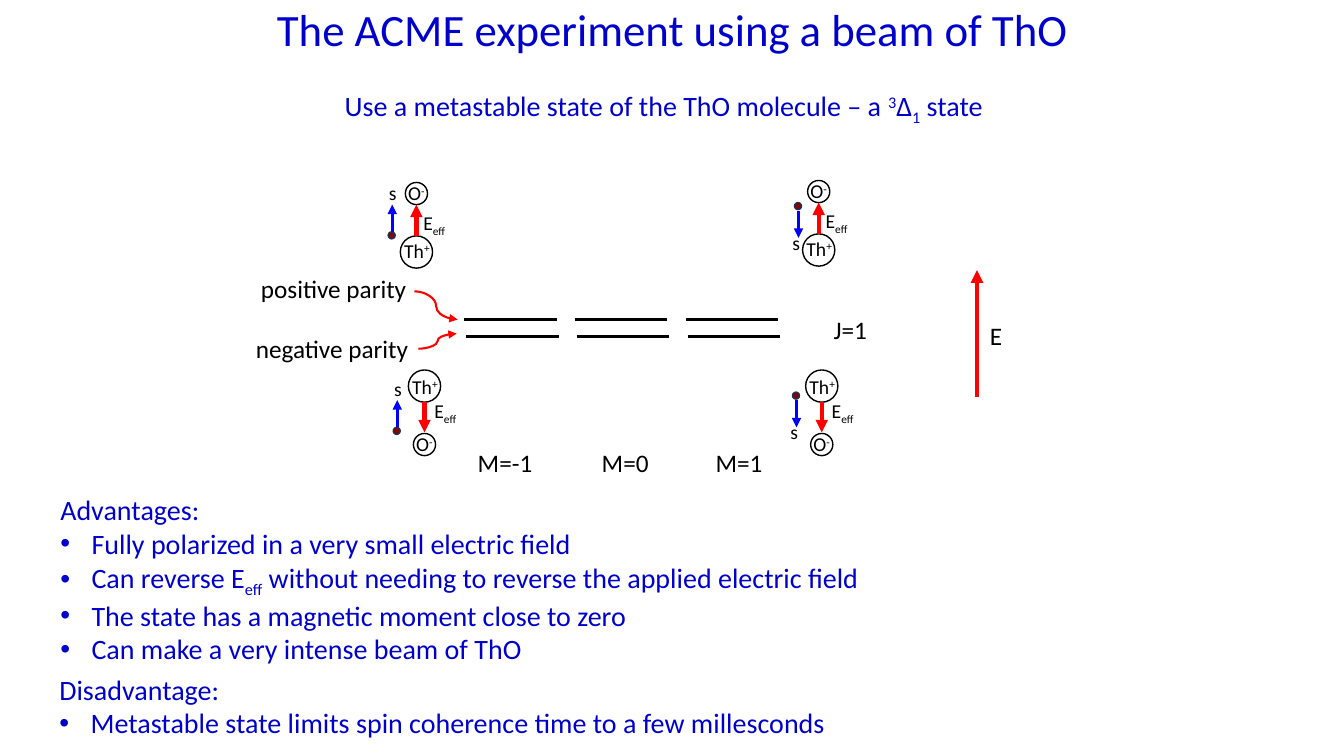
from dataclasses import dataclass
from lxml.etree import SubElement as Sub
from pptx import Presentation
from pptx.dml.color import RGBColor as Rgb
from pptx.enum.shapes import MSO_CONNECTOR as Conn, MSO_SHAPE as Geo
from pptx.enum.text import MSO_ANCHOR as Anchor, MSO_AUTO_SIZE as Auto, PP_ALIGN as Align
from pptx.oxml.ns import qn
from pptx.util import Inches, Pt


@dataclass(frozen=True)
class Theme:
    """Hold the colours, font and type sizes."""
    font: str = "Calibri"
    blue: str = "0000CC"
    black: str = "000000"
    red: str = "FF0000"
    spin: str = "0000FF"
    dot: str = "860000"
    edge: str = "1E3256"
    title: int = 32
    body: int = 20
    label: int = 18
    small: int = 14


def apply(obj, form):
    """Set each attribute named in a dict."""
    for name, value in form.items():
        setattr(obj, name, value)


class Board:
    """Draw the elements of one slide in one style."""

    def __init__(self, slide, theme):
        """Keep the slide and its theme."""
        self.slide, self.theme = slide, theme

    def text(self, x, y, w, h, paras, size, color, align=Align.LEFT):
        """Add a text box; a paragraph is a list of (text, baseline) runs."""
        box = self.slide.shapes.add_textbox(Inches(x), Inches(y), Inches(w), Inches(h))
        frame = box.text_frame
        mid = align == Align.CENTER
        apply(frame, {
            "word_wrap": True,
            "vertical_anchor": Anchor.TOP,
            "auto_size": Auto.NONE if mid else Auto.SHAPE_TO_FIT_TEXT,
            "margin_right": Inches(0.1 if mid else 0),
        })
        for i, runs in enumerate(paras):
            para = frame.paragraphs[0] if i == 0 else frame.add_paragraph()
            para.alignment = align
            if i:
                self.bullet(para)
            for words, base in runs:
                run = para.add_run()
                run.text = words
                apply(run.font, {"name": self.theme.font, "size": Pt(size)})
                run.font.color.rgb = Rgb.from_string(color)
                if base:
                    run.font._element.set("baseline", str(base * 1000))

    def bullet(self, para):
        """Give a paragraph a round bullet and a hanging indent."""
        props = para._p.get_or_add_pPr()
        props.set("marL", str(Inches(0.31)))
        props.set("indent", str(-Inches(0.31)))
        Sub(props, qn("a:buFont")).set("typeface", "Arial")
        Sub(props, qn("a:buChar")).set("char", "•")

    def label(self, x, y, w, words):
        """Add a one-line black label."""
        self.text(x, y, w, 0.4, [[(words, 0)]], self.theme.label, self.theme.black)

    def mark(self, x, y, w, *runs):
        """Add a small label of plain and raised or lowered runs."""
        self.text(x, y, w, 0.34, [runs], self.theme.small, self.theme.black)

    def line(self, x1, y1, x2, y2, color, width, head=True, kind=Conn.STRAIGHT):
        """Add a connector, with an arrowhead if asked."""
        link = self.slide.shapes.add_connector(
            kind, Inches(x1), Inches(y1), Inches(x2), Inches(y2))
        link.line.color.rgb = Rgb.from_string(color)
        link.line.width = Pt(width)
        if head:
            Sub(link.line._get_or_add_ln(), qn("a:tailEnd")).set("type", "triangle")
        Sub(link._element.spPr, qn("a:effectLst"))

    def disc(self, x, y, size, edge, fill=None):
        """Add a circle, hollow unless a fill is given."""
        disc = self.slide.shapes.add_shape(
            Geo.OVAL, Inches(x), Inches(y), Inches(size), Inches(size))
        disc.shadow.inherit = False
        if fill:
            disc.fill.solid()
            disc.fill.fore_color.rgb = Rgb.from_string(fill)
        else:
            disc.fill.background()
        disc.line.color.rgb = Rgb.from_string(edge)
        disc.line.width = Pt(1)

    def ion(self, x, y, up):
        """Add a ThO molecule whose Th circle starts at x, y."""
        tone = self.theme
        oxy, tail, tip = (-0.53, 0, -0.31) if up else (0.63, 0.32, 0.62)
        self.disc(x, y, 0.32, tone.black)
        self.mark(x - 0.06, y - (0.02 if up else 0), 0.47, ("Th", 0), ("+", 30))
        self.disc(x + 0.05, y + oxy, 0.22, tone.black)
        self.mark(x - 0.02, y + oxy - 0.06, 0.47, ("O", 0), ("-", 30))
        self.line(x + 0.16, y + tail, x + 0.16, y + tip, tone.red, 3)
        dx, dy = (0.13, -0.3) if up else (0.16, 0.24)
        self.mark(x + dx, y + dy, 0.65, ("E", 0), ("eff", -25))

    def spin(self, x, y, up):
        """Add a spin arrow whose dot starts at x, y."""
        tone = self.theme
        tail, tip, dx, dy = (0, -0.27, -0.09, -0.55) if up else (0.08, 0.35, -0.12, 0.23)
        self.disc(x, y, 0.07, tone.edge, tone.dot)
        self.line(x + 0.04, y + tail, x + 0.04, y + tip, tone.spin, 2.25)
        self.mark(x + dx, y + dy, 0.2, ("s", 0))


def main():
    """Build and save the slide."""
    deck = Presentation()
    apply(deck, {"slide_width": Inches(13.33), "slide_height": Inches(7.5)})
    tone = Theme()
    board = Board(deck.slides.add_slide(deck.slide_layouts[6]), tone)

    board.text(1.67, -0.03, 10, 0.92, [[("The ACME experiment using a beam of ThO", 0)]],
               tone.title, tone.blue, Align.CENTER)
    board.text(3.32, 0.83, 7.41, 0.44, [[
        ("Use a metastable state of the ThO molecule – a ", 0),
        ("3", 30), ("Δ", 0), ("1", -25), (" state", 0)]], tone.body, tone.blue)

    for x, y in ((4.6, 3.17), (4.62, 3.34)):
        for i in range(3):
            left = x + 1.1 * i
            board.line(left, y, left + 0.92, y, tone.black, 2.25, head=False)

    for x, y, w, words in (
        (4.64, 4.39, 1.04, "M=-1"),
        (5.87, 4.39, 0.83, "M=0"),
        (7, 4.39, 1.04, "M=1"),
        (8.17, 3.07, 0.83, "J=1"),
        (2.49, 2.66, 2.13, "positive parity"),
        (2.44, 3.26, 2.13, "negative parity"),
        (9.72, 3.13, 0.37, "E"),
    ):
        board.label(x, y, w, words)

    for ends in ((4.11, 2.89, 4.54, 3.17), (4.15, 3.46, 4.53, 3.31)):
        board.line(*ends, tone.red, 1.5, kind=Conn.CURVE)
    board.line(9.69, 3.94, 9.69, 2.68, tone.red, 3)

    for x, y, up in ((3.97, 2.34, True), (7.96, 2.32, True),
                     (4.05, 3.67, False), (7.99, 3.67, False)):
        board.ion(x, y, up)
    for x, y, up in ((3.85, 2.3, True), (3.9, 4.24, True),
                     (7.88, 2.01, False), (7.86, 3.89, False)):
        board.spin(x, y, up)

    board.text(0.49, 6.62, 12.24, 0.77, [
        [("Disadvantage:", 0)],
        [("Metastable state limits spin coherence time to a few millesconds", 0)],
    ], tone.body, tone.blue)
    board.text(0.5, 4.84, 12.24, 1.78, [
        [("Advantages:", 0)],
        [("Fully polarized in a very small electric field", 0)],
        [("Can reverse E", 0), ("eff", -25),
         (" without needing to reverse the applied electric field", 0)],
        [("The state has a magnetic moment close to zero", 0)],
        [("Can make a very intense beam of ThO", 0)],
    ], tone.body, tone.blue)
    deck.save("out.pptx")


if __name__ == "__main__":
    main()
